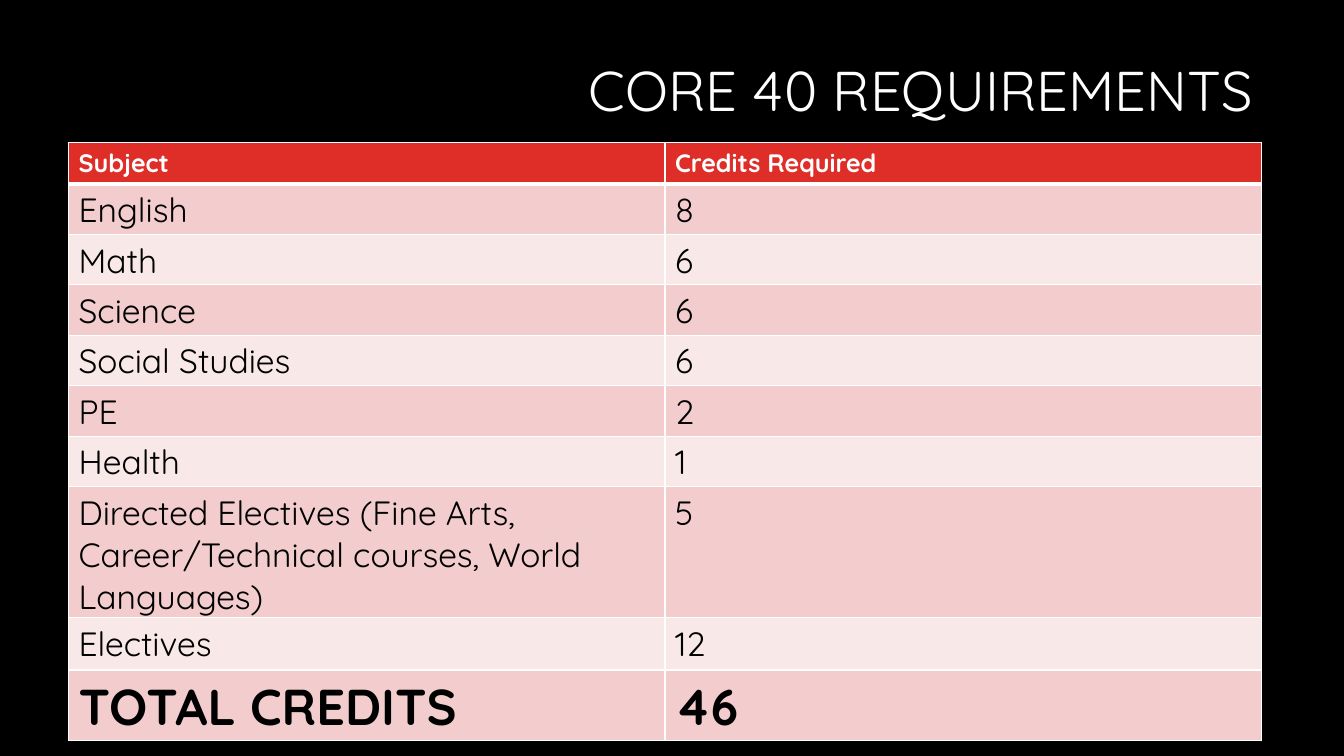
"""Build the Core 40 credit requirements slide."""
from lxml.etree import SubElement
from pptx import Presentation
from pptx.dml.color import RGBColor as RGB
from pptx.enum.text import MSO_ANCHOR as ANCHOR, PP_ALIGN as ALIGN
from pptx.oxml.ns import qn
from pptx.util import Inches, Pt

W, H = Inches(13.33), Inches(7.5)
FONT = "Quicksand"
COLORS = {"back": "000000", "light": "FFFFFF", "dark": "000000",
          "header": "DF2E28", "odd": "F3CDCD", "even": "F9E8E8"}
TITLE = {"size": Pt(40), "bold": False}
HEADER = {"size": Pt(18), "bold": True}
BODY = {"size": Pt(24), "bold": False}
TOTAL = {"size": Pt(36), "bold": True}
ROW_H, TALL_ROW_H = 0.41, 0.52
ROWS = [
    ("Subject", "Credits Required"),
    ("English", "8"),
    ("Math", "6"),
    ("Science", "6"),
    ("Social Studies", "6"),
    ("PE", "2"),
    ("Health", "1"),
    ("Directed Electives (Fine Arts, Career/Technical courses, "
     "World Languages)", "5"),
    ("Electives", "12"),
    ("TOTAL CREDITS", "46"),
]


def share(x, y, w, h):
    """Turn percentages of the slide's size into lengths."""
    return [int(size * part / 100)
            for size, part in zip((W, H, W, H), (x, y, w, h))]


def write(tf, text, color, style):
    """Put one formatted run into a text frame and return its paragraph."""
    p = tf.paragraphs[0]
    r = p.add_run()
    r.text = text
    for name, value in {"name": FONT, **style}.items():
        setattr(r.font, name, value)
    r.font.color.rgb = RGB.from_string(COLORS[color])
    return p


def add_title(slide, text):
    """Add the right-aligned slide title."""
    tf = slide.shapes.add_textbox(*share(23.26, 2.93, 70.67, 18.8)).text_frame
    tf.word_wrap = True
    tf.vertical_anchor = ANCHOR.MIDDLE
    p = write(tf, text, "light", TITLE)
    p.alignment = ALIGN.RIGHT
    p.line_spacing = 0.9


def set_borders(cell, widths):
    """Draw light cell borders, given left, right, top and bottom widths."""
    props = cell._tc.get_or_add_tcPr()
    for i, (side, width) in enumerate(zip("LRTB", widths)):
        line = SubElement(props, qn(f"a:ln{side}"), w=str(Pt(width)))
        fill = SubElement(line, qn("a:solidFill"))
        SubElement(fill, qn("a:srgbClr"), val=COLORS["light"])
        props.insert(i, line)


def row_format(i):
    """Choose the fill, text colour and font style of a row."""
    if i == 0:
        return "header", "light", HEADER
    style = TOTAL if i == len(ROWS) - 1 else BODY
    return ("odd" if i % 2 else "even"), "dark", style


def add_credits_table(slide):
    """Add the table of subjects and credits."""
    table = slide.shapes.add_table(
        len(ROWS), 2, *share(5.1, 18.87, 88.76, 78.93)).table
    for i, texts in enumerate(ROWS):
        is_tall = i == len(ROWS) - 2
        table.rows[i].height = Inches(TALL_ROW_H if is_tall else ROW_H)
        fill, color, style = row_format(i)
        widths = (1, 1, 3 if i == 1 else 1, 3 if i == 0 else 1)
        for j, text in enumerate(texts):
            cell = table.cell(i, j)
            cell.fill.solid()
            cell.fill.fore_color.rgb = RGB.from_string(COLORS[fill])
            set_borders(cell, widths)
            write(cell.text_frame, text, color, style)


def main():
    """Create the slide and save it."""
    prs = Presentation()
    prs.slide_width, prs.slide_height = W, H
    slide = prs.slides.add_slide(prs.slide_layouts[6])
    slide.background.fill.solid()
    slide.background.fill.fore_color.rgb = RGB.from_string(COLORS["back"])
    add_title(slide, "CORE 40 REQUIREMENTS")
    add_credits_table(slide)
    prs.save("out.pptx")


if __name__ == "__main__":
    main()
